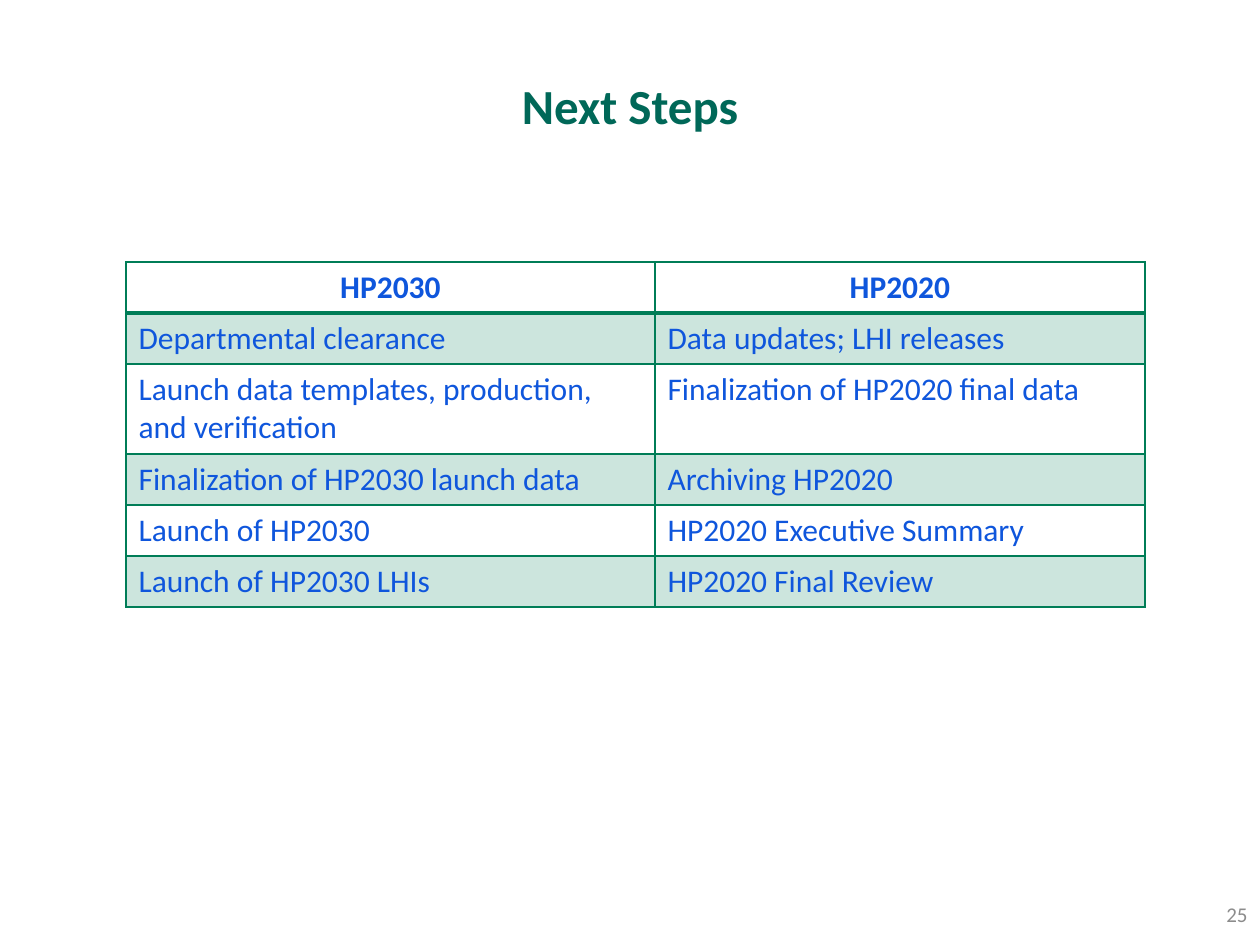
from lxml import etree
from pptx import Presentation
from pptx import util as u
from pptx.dml.color import RGBColor
from pptx.enum import text
from pptx.oxml.ns import qn

PX = 914400 / 126
FONT = "Calibri"
COLORS = {
    "title": "006858",
    "number": "8C8C8C",
    "body": "0F56DC",
    "border": "007D57",
    "band": "CCE5DD",
}
STEPS = [
    ("HP2030", "HP2020"),
    ("Departmental clearance", "Data updates; LHI releases"),
    ("Launch data templates, production, and verification",
     "Finalization of HP2020 final data"),
    ("Finalization of HP2030 launch data", "Archiving HP2020"),
    ("Launch of HP2030", "HP2020 Executive Summary"),
    ("Launch of HP2030 LHIs", "HP2020 Final Review"),
]
COLUMN_WIDTHS = (529, 490)
ROW_HEIGHTS = (51, 51, 90, 51, 51, 51)


def px(length):
    return u.Emu(round(length * PX))


def write(frame, words, size, color, align, bold=False):
    frame.text = words
    para = frame.paragraphs[0]
    para.alignment = align
    for span in para.runs:
        span.font.name = FONT
        span.font.size = u.Pt(size)
        span.font.bold = bold
        span.font.color.rgb = RGBColor.from_string(COLORS[color])


def add_title(page, box):
    title = page.shapes.title
    title.left, title.top, title.width, title.height = map(px, box)
    frame = title.text_frame
    frame.word_wrap = True
    frame.vertical_anchor = text.MSO_ANCHOR.MIDDLE
    write(frame, "Next Steps", 28, "title", text.PP_ALIGN.CENTER, True)
    frame.paragraphs[0].line_spacing = u.Pt(30)


def add_page_number(page, box):
    frame = page.shapes.add_textbox(*map(px, box)).text_frame
    frame.word_wrap = True
    write(frame, "25", 12, "number", text.PP_ALIGN.RIGHT)


def set_border(cell, side, points):
    line = etree.SubElement(cell._tc.get_or_add_tcPr(), qn(f"a:ln{side}"),
                            w=str(u.Pt(points)))
    fill = etree.SubElement(line, qn("a:solidFill"))
    etree.SubElement(fill, qn("a:srgbClr"), val=COLORS["border"])


def add_steps_table(page, left, top):
    box = (left, top, sum(COLUMN_WIDTHS), sum(ROW_HEIGHTS))
    table = page.shapes.add_table(
        len(STEPS), len(COLUMN_WIDTHS), *map(px, box)).table
    for column, width in zip(table.columns, COLUMN_WIDTHS):
        column.width = px(width)
    for index, (row, height, words) in enumerate(
            zip(table.rows, ROW_HEIGHTS, STEPS)):
        row.height = px(height)
        header = index == 0
        align = text.PP_ALIGN.CENTER if header else text.PP_ALIGN.LEFT
        for cell, label in zip(row.cells, words):
            write(cell.text_frame, label, 18, "body", align, header)
            for side in "LRTB":
                thick = (index, side) in ((0, "B"), (1, "T"))
                set_border(cell, side, 2 if thick else 1)
            if index % 2:
                cell.fill.solid()
                cell.fill.fore_color.rgb = RGBColor.from_string(COLORS["band"])
            else:
                cell.fill.background()


def main():
    deck = Presentation()
    deck.slide_width, deck.slide_height = px(1260), px(945)
    page = deck.slides.add_slide(deck.slide_layouts[5])
    add_title(page, (63, 38, 1134, 141))
    add_page_number(page, (1197, 895, 63, 50))
    add_steps_table(page, 126, 262)
    deck.save("out.pptx")


if __name__ == "__main__":
    main()
